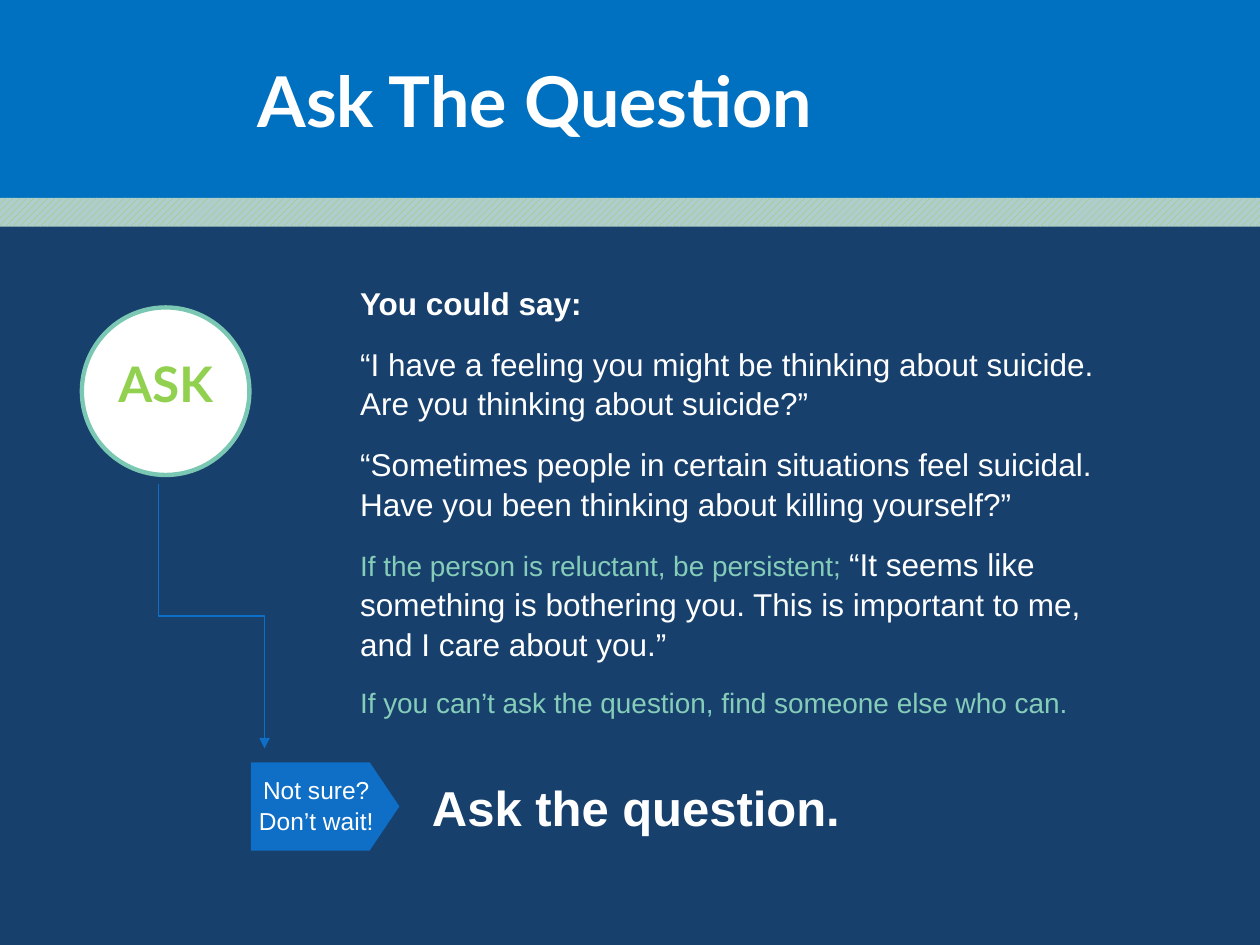
from lxml import etree
from pptx import Presentation
from pptx import util as u
from pptx.dml import color
from pptx.enum import dml, shapes, text
from pptx.oxml import ns

WHITE, MINT, GREEN, BLUE = "FFFFFF", "85CDB9", "92D050", "0F6FC6"
SAY_PARAGRAPHS = [
    [("You could say:", 18, WHITE, True)],
    [("“I have a feeling you might be thinking about suicide. "
      "Are you thinking about suicide?”", 18, WHITE, False)],
    [("“Sometimes people in certain situations feel suicidal. "
      "Have you been thinking about killing yourself?”", 18, WHITE, False)],
    [("If the person is reluctant, be persistent; ", 16, MINT, False),
     ("“It seems like something is bothering you. This is important to me, "
      "and I care about you.”", 18, WHITE, False)],
    [("If you can’t ask the question, find someone else who can.", 16, MINT, False)],
]


def rgb(value):
    return color.RGBColor.from_string(value)


def inches(*lengths):
    return [u.Inches(length) for length in lengths]


def style_font(font, name, size, colour, bold):
    font.name, font.size, font.bold = name, u.Pt(size), bold
    font.color.rgb = rgb(colour)


def add_block(slide, kind, box, fill, line=None, rotation=0):
    shape = slide.shapes.add_shape(kind, *inches(*box))
    shape.shadow.inherit = False
    shape.rotation = rotation
    shape.fill.solid()
    shape.fill.fore_color.rgb = rgb(fill)
    if line:
        shape.line.color.rgb = rgb(line)
        shape.line.width = u.Pt(2.5)
    else:
        shape.line.fill.background()
    return shape


def add_hatched_band(slide, box, front, back):
    band = add_block(slide, shapes.MSO_SHAPE.RECTANGLE, box, back)
    band.fill.patterned()
    band.fill.pattern = dml.MSO_PATTERN.WIDE_UPWARD_DIAGONAL
    band.fill.fore_color.rgb = rgb(front)
    band.fill.back_color.rgb = rgb(back)


def add_frame(slide, box):
    frame = slide.shapes.add_textbox(*inches(*box)).text_frame
    frame.word_wrap = True
    return frame


def add_label(slide, box, lines, name, size, colour=WHITE, bold=True,
              align=text.PP_ALIGN.CENTER, spacing=1.0):
    frame = add_frame(slide, box)
    frame.text = "\n".join(lines)
    for paragraph in frame.paragraphs:
        paragraph.alignment = align
        paragraph.line_spacing = spacing
        style_font(paragraph.font, name, size, colour, bold)
    return frame


def add_say_text(slide, box):
    frame = add_frame(slide, box)
    for index, runs in enumerate(SAY_PARAGRAPHS):
        paragraph = frame.add_paragraph() if index else frame.paragraphs[0]
        paragraph.space_after = u.Pt(12)
        paragraph.line_spacing = 1.05
        for words, size, colour, bold in runs:
            run = paragraph.add_run()
            run.text = words
            style_font(run.font, "Arial", size, colour, bold)


def add_elbow_arrow(slide, start, end, colour):
    middle_x, middle_y = (start[0] + end[0]) / 2, (start[1] + end[1]) / 2
    half_width, half_height = (end[1] - start[1]) / 2, (end[0] - start[0]) / 2
    arrow = slide.shapes.add_connector(
        shapes.MSO_CONNECTOR.ELBOW,
        *inches(middle_x + half_width, middle_y - half_height,
                middle_x - half_width, middle_y + half_height))
    arrow.line.color.rgb = rgb(colour)
    arrow.line.width = u.Pt(0.75)
    properties = arrow._element.spPr
    properties.find(ns.qn("a:xfrm")).set("rot", str(270 * 60000))
    line = properties.find(ns.qn("a:ln"))
    etree.SubElement(line, ns.qn("a:tailEnd")).set("type", "triangle")
    etree.SubElement(properties, ns.qn("a:effectLst"))


def main():
    presentation = Presentation()
    presentation.slide_width, presentation.slide_height = inches(10, 7.5)
    slide = presentation.slides.add_slide(presentation.slide_layouts[6])
    slide.background.fill.solid()
    slide.background.fill.fore_color.rgb = rgb("0070C0")

    add_block(slide, shapes.MSO_SHAPE.RECTANGLE, (0, 1.62, 10, 5.88), "17406D")
    add_say_text(slide, (2.76, 2.19, 6.34, 3.47))
    add_label(slide, (1.32, 0.41, 5.85, 0.77), ["Ask The Question"], "Lato", 40)
    add_block(slide, shapes.MSO_SHAPE.OVAL, (0.65, 2.44, 1.33, 1.33), WHITE, "7AC8B3")
    add_label(slide, (0.73, 2.76, 1.17, 0.57), ["ASK"], "Lato", 28, GREEN)
    add_hatched_band(slide, (0, 1.57, 10, 0.23), GREEN, "AFCDCD")
    closing = add_label(slide, (2.35 + 0.98, 6.11, 4.41, 0.57), ["Ask the question."],
                        "Arial", 28, align=text.PP_ALIGN.LEFT, spacing=1.05)
    closing.vertical_anchor = text.MSO_ANCHOR.MIDDLE
    add_block(slide, shapes.MSO_SHAPE.FLOWCHART_OFFPAGE_CONNECTOR,
              (2.23, 5.81, 0.7, 1.18), BLUE, rotation=270)
    add_label(slide, (1.92, 6.09, 1.18, 0.57), ["Not sure?", "Don’t wait!"],
              "Arial", 14, bold=False, spacing=1.05)
    add_elbow_arrow(slide, (1.26, 3.84), (2.1, 5.94), BLUE)
    presentation.save("out.pptx")


if __name__ == "__main__":
    main()
